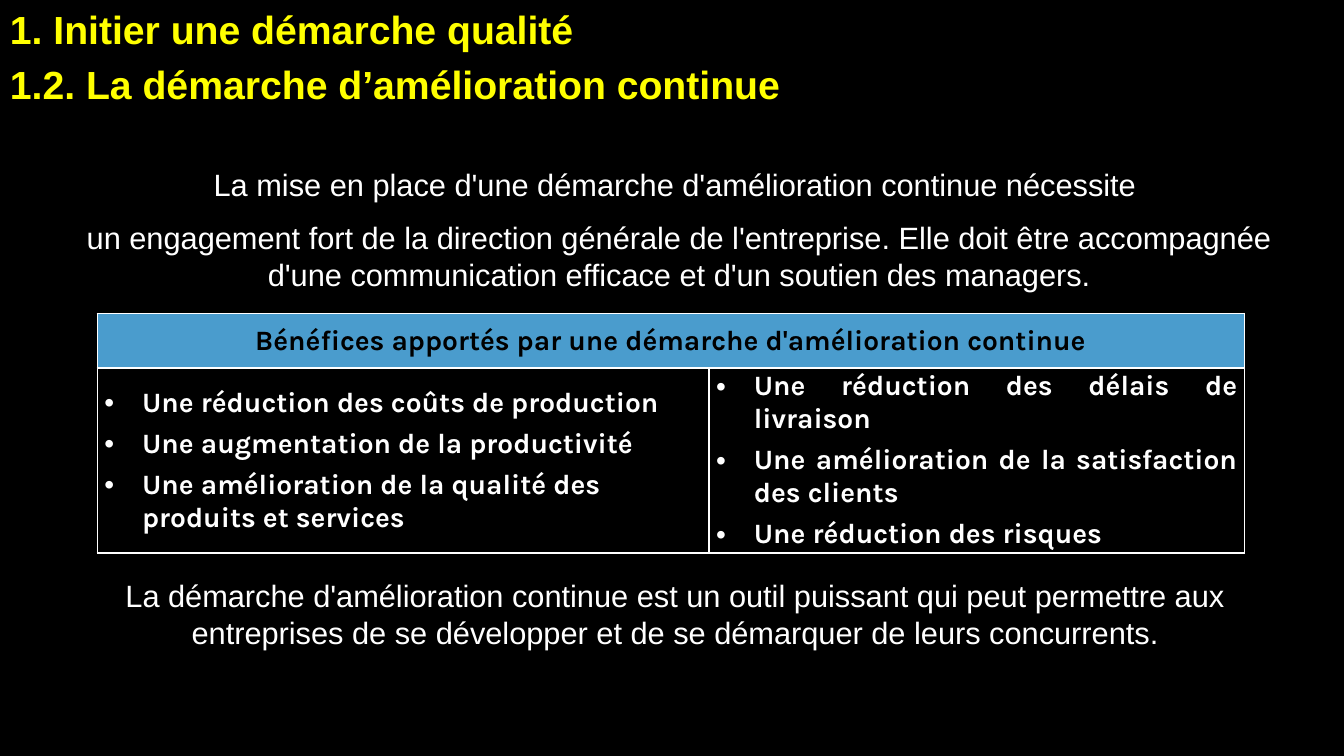
from lxml.etree import SubElement
from pptx import Presentation
from pptx.dml.color import RGBColor
from pptx.enum.text import MSO_ANCHOR, PP_ALIGN
from pptx.oxml.ns import qn
from pptx.util import Pt

HUES = {
    "black": "000000",
    "white": "FFFFFF",
    "gold": "FFFF00",
    "blue": "4A9CCD",
}
HEAD = ["1. Initier une démarche qualité", "1.2. La démarche d’amélioration continue"]
INTRO = [
    "La mise en place d'une démarche d'amélioration continue nécessite ",
    "un engagement fort de la direction générale de l'entreprise. Elle doit être "
    "accompagnée d'une communication efficace et d'un soutien des managers.",
]
TITLE = "Bénéfices apportés par une démarche d'amélioration continue"
GAINS = [
    [
        ("Une réduction des coûts de production", PP_ALIGN.JUSTIFY),
        ("Une augmentation de la productivité", PP_ALIGN.JUSTIFY),
        ("Une amélioration de la qualité des produits et services", PP_ALIGN.LEFT),
    ],
    [
        ("Une réduction des délais de livraison", PP_ALIGN.JUSTIFY),
        ("Une amélioration de la satisfaction des clients", PP_ALIGN.JUSTIFY),
        ("Une réduction des risques", PP_ALIGN.JUSTIFY),
    ],
]
CLOSE = [
    "La démarche d'amélioration continue est un outil puissant qui peut permettre aux "
    "entreprises de se développer et de se démarquer de leurs concurrents."
]


def hue(name):
    return RGBColor.from_string(HUES[name])


def paint(fill, name):
    fill.solid()
    fill.fore_color.rgb = hue(name)


def add_line(frame, first, text, size, face, tint, bold, align, above, below):
    para = frame.paragraphs[0] if first else frame.add_paragraph()
    para.alignment = align
    para.space_before = Pt(above)
    para.space_after = Pt(below)
    run = para.add_run()
    run.text = text
    font = run.font
    font.size = Pt(size)
    font.name = face
    font.bold = bold
    font.color.rgb = hue(tint)
    return para


def add_text(slide, area, lines, size, tint, bold, align, above, below):
    frame = slide.shapes.add_textbox(*map(Pt, area)).text_frame
    frame.word_wrap = True
    for row, text in enumerate(lines):
        add_line(frame, row == 0, text, size, "Arial", tint, bold, align, above, below)


def add_dot(para):
    props = para._p.get_or_add_pPr()
    props.set("marL", str(Pt(27)))
    props.set("indent", str(-Pt(27)))
    SubElement(props, qn("a:buFont"), typeface="Arial")
    SubElement(props, qn("a:buChar"), char="•")


def style_cell(cell, tint):
    cell.vertical_anchor = MSO_ANCHOR.MIDDLE
    cell.margin_left = cell.margin_right = Pt(5)
    cell.margin_top = cell.margin_bottom = 0
    props = cell._tc.get_or_add_tcPr()
    for side in ("lnL", "lnR", "lnT", "lnB"):
        edge = SubElement(props, qn(f"a:{side}"), w=str(Pt(1)))
        solid = SubElement(edge, qn("a:solidFill"))
        SubElement(solid, qn("a:srgbClr"), val=HUES["white"])
    paint(cell.fill, tint)


def add_grid(slide, area, widths, heights):
    grid = slide.shapes.add_table(len(heights), len(widths), *map(Pt, area)).table
    for col, width in zip(grid.columns, widths):
        col.width = Pt(width)
    for row, height in zip(grid.rows, heights):
        row.height = Pt(height)
    for col, gains in enumerate(GAINS):
        style_cell(grid.cell(0, col), "blue")
        cell = grid.cell(1, col)
        style_cell(cell, "black")
        for row, (text, align) in enumerate(gains):
            para = add_line(cell.text_frame, row == 0, text, 20, "Karla", "white",
                            True, align, 6, 0)
            add_dot(para)
    top = grid.cell(0, 0)
    top.merge(grid.cell(0, 1))
    add_line(top.text_frame, True, TITLE, 20, "Karla", "black", True,
             PP_ALIGN.CENTER, 3, 3)


def main():
    deck = Presentation()
    deck.slide_width = Pt(960)
    deck.slide_height = Pt(540)
    slide = deck.slides.add_slide(deck.slide_layouts[6])
    paint(slide.background.fill, "black")
    mid = PP_ALIGN.CENTER
    add_text(slide, (0, 0, 723.6, 78.5), HEAD, 28, "gold", True, PP_ALIGN.LEFT, 3, 3)
    add_text(slide, (48.2, 114.5, 874, 93.6), INTRO, 22, "white", False, mid, 6, 6)
    add_grid(slide, (69.5, 224, 819.4, 167.8), (437, 382.4), (38.9, 128.9))
    add_text(slide, (80.6, 408.2, 803.5, 60.5), CLOSE, 22, "white", False, mid, 6, 0)
    deck.save("out.pptx")


if __name__ == "__main__":
    main()
